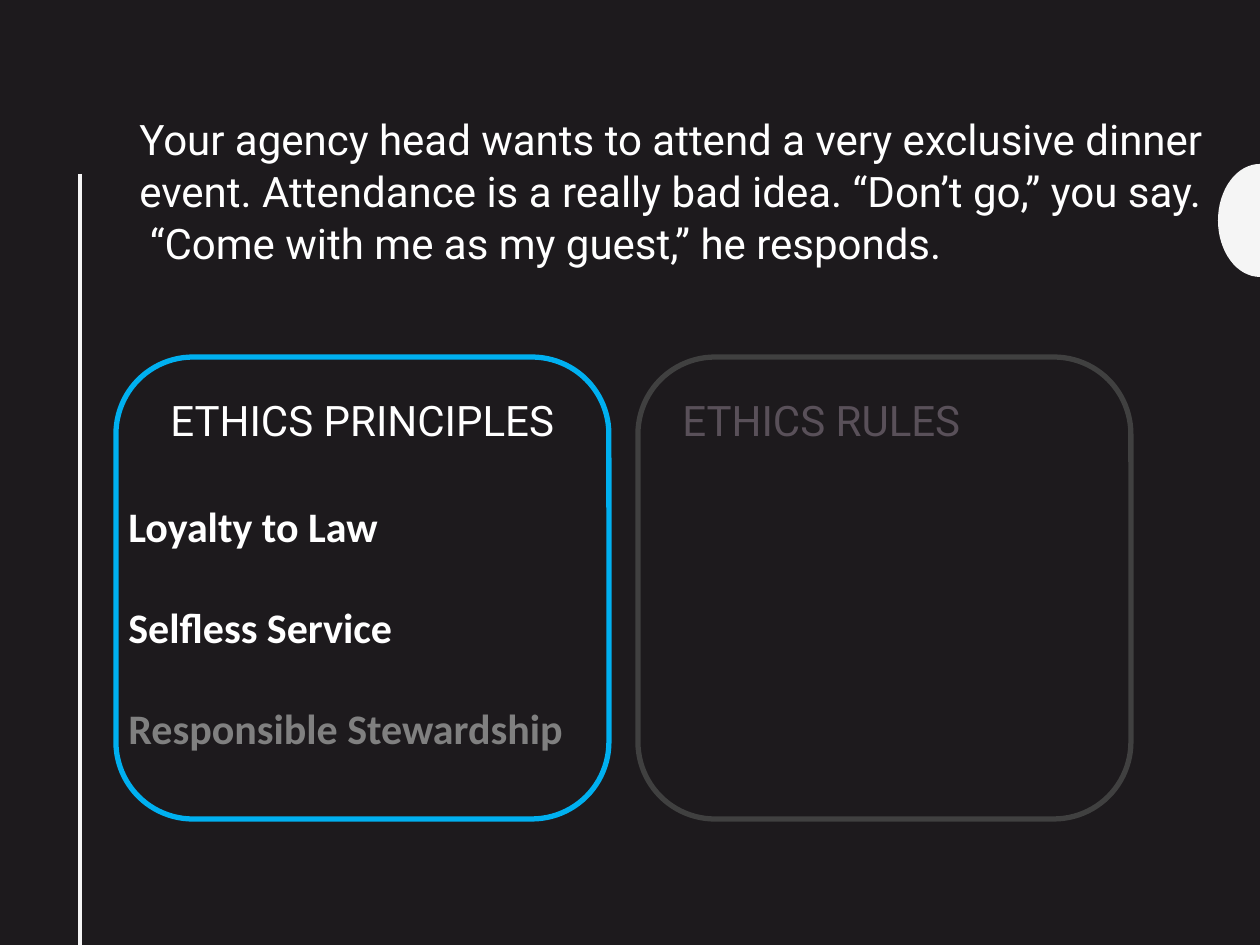
from math import cos, pi, sin

from lxml.etree import SubElement
from pptx import Presentation
from pptx.dml.color import RGBColor as RGB
from pptx.enum.shapes import MSO_CONNECTOR as CONN, MSO_SHAPE as SHAPE
from pptx.oxml.ns import qn
from pptx.util import Pt

PX = 914400 / 126
COLORS = {
    "background": "1D1A1D",
    "trim": "F5F5F5",
    "text": "FFFFFF",
    "active": "00B0F0",
    "inactive": "404040",
    "faded_heading": "595059",
    "faded_item": "808080",
}
BODY = {"name": "Roboto", "size": Pt(24)}
ITEM = {"name": "Calibri", "size": Pt(24), "bold": True}


def px(n):
    return round(n * PX)


def color(name):
    return RGB.from_string(COLORS[name])


def add_text(s, box, lines, font, **para):
    tf = s.shapes.add_textbox(*map(px, box)).text_frame
    tf.word_wrap = True
    for i, (text, ink) in enumerate(lines):
        p = tf.add_paragraph() if i else tf.paragraphs[0]
        for key, value in para.items():
            if i or key != "space_before":
                setattr(p, key, value)
        r = p.add_run()
        r.text = text
        for key, value in font.items():
            setattr(r.font, key, value)
        r.font.color.rgb = color(ink)


def add_trim(s, box):
    x, y, w, h = box
    rx, ry = w, h / 2
    steps = 32
    points = [
        (px(x + w - rx * sin(pi * i / steps)), px(y + ry - ry * cos(pi * i / steps)))
        for i in range(steps + 1)
    ]
    builder = s.shapes.build_freeform(*points[0])
    builder.add_line_segments(points[1:], close=True)
    sp = builder.convert_to_shape()
    sp.shadow.inherit = False
    sp.fill.solid()
    sp.fill.fore_color.rgb = color("trim")
    sp.line.fill.background()


def add_rule(s, x, top, bottom):
    rule = s.shapes.add_connector(CONN.STRAIGHT, px(x), px(top), px(x), px(bottom))
    rule.line.color.rgb = color("trim")
    rule.line.width = Pt(2)
    SubElement(rule._element.spPr, qn("a:effectLst"))


def add_panel(s, box, outline, heading, ink, inset, items=()):
    x, y, w, h = box
    add_text(s, (x + inset, y + 31, 455, 63), [(heading, ink)], BODY)
    sp = s.shapes.add_shape(SHAPE.ROUNDED_RECTANGLE, *map(px, box))
    sp.shadow.inherit = False
    sp.fill.background()
    sp.line.color.rgb = color(outline)
    sp.line.width = Pt(3)
    if items:
        add_text(s, (x, y + 137, w - 9, 267), items, ITEM, space_before=Pt(29))


def main():
    prs = Presentation()
    prs.slide_width, prs.slide_height = px(1260), px(945)
    s = prs.slides.add_slide(prs.slide_layouts[6])
    s.background.fill.solid()
    s.background.fill.fore_color.rgb = color("background")

    add_trim(s, (1218, 164, 42, 113))
    add_rule(s, 80, 174, 945)
    add_panel(
        s, (116, 357, 493, 462), "active", "ETHICS PRINCIPLES", "text", 42,
        [
            ("Loyalty to Law", "text"),
            ("Selfless Service", "text"),
            ("Responsible Stewardship", "faded_item"),
        ],
    )
    add_panel(
        s, (638, 357, 493, 462), "inactive", "ETHICS RULES", "faded_heading", 32
    )
    scenario = (
        "Your agency head wants to attend a very exclusive dinner event. "
        "Attendance is a really bad idea. “Don’t go,” you say. "
        " “Come with me as my guest,” he responds."
    )
    add_text(s, (127, 105, 1091, 228), [(scenario, "text")], BODY, line_spacing=1.04)
    prs.save("out.pptx")


if __name__ == "__main__":
    main()
